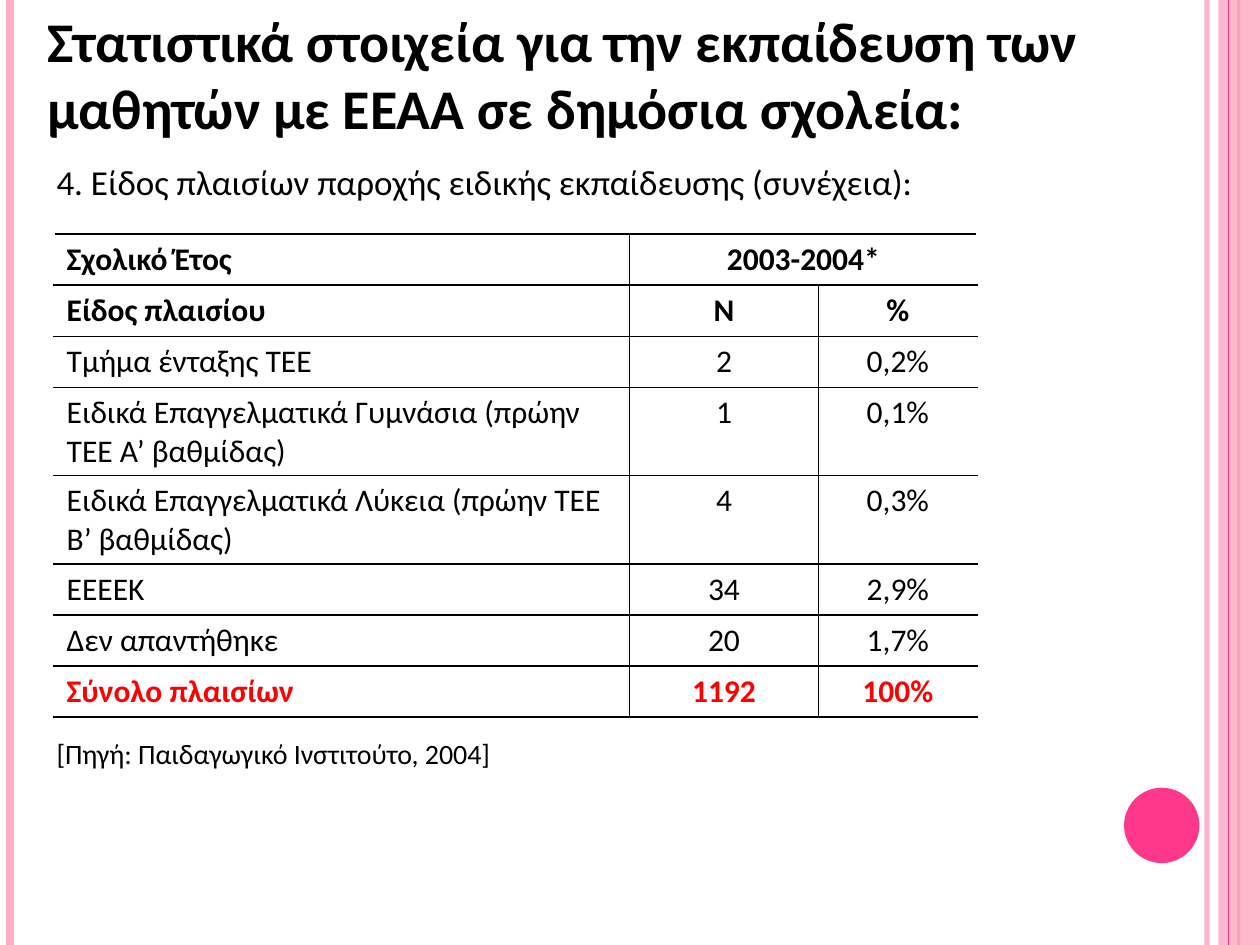
from lxml.etree import SubElement as Sub
from pptx import Presentation
from pptx.dml.color import RGBColor as Rgb
from pptx.enum.shapes import MSO_CONNECTOR as Conn, MSO_SHAPE as Form
from pptx.enum.text import PP_ALIGN as Align
from pptx.oxml.ns import qn
from pptx.util import Cm, Pt

HUES = {"black": "000000", "white": "FFFFFF", "red": "FF0000",
        "pink": "FFAFC5", "rose": "FF388C"}
HIGH = 19.05
LINES = [(24.33, "pink", 3, 93), (0.2, "pink", 4.5, 100), (24.97, "rose", 1.5, 100)]
COLS = [11.6, 3.81, 3.2]
ROWS = [
    ("Σχολικό Έτος", "2003-2004*", ""),
    ("Είδος πλαισίου", "Ν", "%"),
    ("Τμήμα ένταξης ΤΕΕ", "2", "0,2%"),
    ("Ειδικά Επαγγελματικά Γυμνάσια (πρώην ΤΕΕ Α’ βαθμίδας)", "1", "0,1%"),
    ("Ειδικά Επαγγελματικά Λύκεια (πρώην ΤΕΕ Β’ βαθμίδας)", "4", "0,3%"),
    ("ΕΕΕΕΚ", "34", "2,9%"),
    ("Δεν απαντήθηκε", "20", "1,7%"),
    ("Σύνολο πλαισίων", "1192", "100%"),
]


def rgb(name):
    return Rgb.from_string(HUES[name])


def fade(item, alpha):
    if alpha < 100:
        tint = next(item._element.spPr.iter(qn("a:srgbClr")))
        Sub(tint, qn("a:alpha"), val=str(alpha * 1000))


def write(frame, text, size=18, hue="black", bold=False, align=Align.LEFT, hang=0):
    para = frame.paragraphs[0]
    para.alignment = align
    if hang:
        props = para._p.get_or_add_pPr()
        props.set("marL", str(Cm(hang)))
        props.set("indent", str(-Cm(hang)))
    run = para.add_run()
    run.text = text
    font = run.font
    font.name, font.size, font.bold = "Calibri", Pt(size), bold
    font.color.rgb = rgb(hue)


class Deck:
    def __init__(self):
        self.prs = Presentation()
        self.prs.slide_width, self.prs.slide_height = Cm(25.4), Cm(HIGH)
        self.slide = self.prs.slides.add_slide(self.prs.slide_layouts[6])
        self.items = self.slide.shapes

    def line(self, x, hue, width, alpha=100):
        line = self.items.add_connector(Conn.STRAIGHT, Cm(x), 0, Cm(x), Cm(HIGH))
        line.line.color.rgb = rgb(hue)
        line.line.width = Pt(width)
        fade(line, alpha)
        Sub(line._element.spPr, qn("a:effectLst"))

    def shape(self, form, box, hue, alpha=100):
        shape = self.items.add_shape(form, *map(Cm, box))
        shape.shadow.inherit = False
        shape.fill.solid()
        shape.fill.fore_color.rgb = rgb(hue)
        shape.line.fill.background()
        fade(shape, alpha)

    def text(self, box, text, **style):
        frame = self.items.add_textbox(*map(Cm, box)).text_frame
        frame.word_wrap = True
        write(frame, text, **style)

    def edge(self, cell, hues):
        props = cell._tc.get_or_add_tcPr()
        for side, hue in zip("LRTB", hues):
            line = Sub(props, qn(f"a:ln{side}"), w=str(Pt(1)))
            Sub(Sub(line, qn("a:solidFill")), qn("a:srgbClr"), val=HUES[hue])

    def table(self, x, y, cols, rows, high):
        box = map(Cm, (x, y, sum(cols), high * len(rows)))
        table = self.items.add_table(len(rows), len(cols), *box).table
        table.first_row = table.horz_banding = False
        for col, wide in zip(table.columns, cols):
            col.width = Cm(wide)
        table.cell(0, 1).merge(table.cell(0, 2))
        last = len(rows) - 1
        for r, row in enumerate(rows):
            table.rows[r].height = Cm(high)
            for c, text in enumerate(row):
                cell = table.cell(r, c)
                if cell.is_spanned:
                    continue
                left = "white" if c == 0 else "black"
                right = "white" if c == 2 or cell.is_merge_origin else "black"
                self.edge(cell, (left, right, "black", "black"))
                cell.fill.background()
                write(cell.text_frame, text, bold=r in (0, 1, last),
                      hue="red" if r == last else "black",
                      align=Align.CENTER if c else Align.LEFT)


def main():
    deck = Deck()
    for args in LINES:
        deck.line(*args)
    deck.shape(Form.RECTANGLE, (24.56, 0, 0.84, HIGH), "pink", 87)
    deck.line(24.77, "rose", 0.75)
    deck.shape(Form.OVAL, (22.66, 15.88, 1.52, 1.52), "rose")
    deck.text((0.71, 0, 23.2, 3),
              "Στατιστικά στοιχεία για την εκπαίδευση των μαθητών με ΕΕΑΑ σε δημόσια σχολεία:",
              size=32, bold=True)
    deck.text((0.89, 3.12, 23.2, 1.12),
              "4. Είδος πλαισίων παροχής ειδικής εκπαίδευσης (συνέχεια):",
              size=20, hang=0.74)
    deck.table(1.09, 4.72, COLS, ROWS, 1.03)
    deck.text((0.89, 14.73, 23.2, 0.94), "[Πηγή: Παιδαγωγικό Ινστιτούτο, 2004]", size=16)
    deck.prs.save("out.pptx")


if __name__ == "__main__":
    main()
